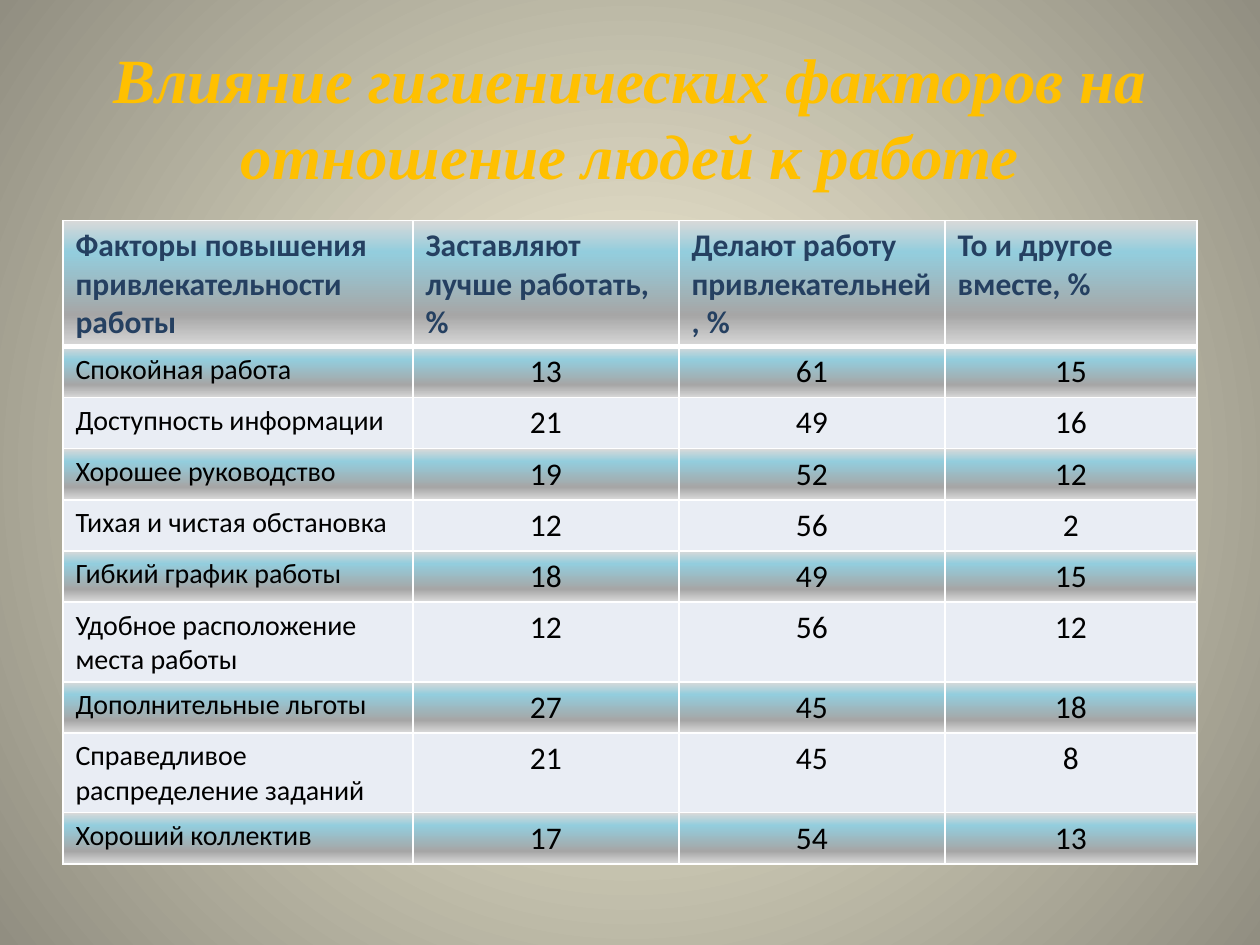
from pptx import Presentation
from pptx.dml.color import RGBColor
from pptx.enum.text import MSO_ANCHOR, PP_ALIGN
from pptx.oxml import parse_xml
from pptx.oxml.ns import nsdecls, qn
from pptx.util import Pt

HEADER = ["Факторы повышения привлекательности работы", "Заставляют лучше работать, %",
          "Делают работу привлекательней, %", "То и другое вместе, %"]
FACTORS = [
    ("Спокойная работа", 13, 61, 15),
    ("Доступность информации", 21, 49, 16),
    ("Хорошее руководство", 19, 52, 12),
    ("Тихая и чистая обстановка", 12, 56, 2),
    ("Гибкий график работы", 18, 49, 15),
    ("Удобное расположение места работы", 12, 56, 12),
    ("Дополнительные льготы", 27, 45, 18),
    ("Справедливое распределение заданий", 21, 45, 8),
    ("Хороший коллектив", 17, 54, 13),
]
COLUMN_WIDTHS = [200, 152, 152, 144]
ROW_HEIGHT = 29.2
BACKDROP = [(0, "FCF7DD"), (100, "918E81")]
METAL = [(0, "D9D9D9"), (25, "A6A6A6"), (75, "93CDDD"), (100, "D9D9D9")]
UPWARD = '<a:lin ang="16200000" scaled="0"/>'
RADIAL = '<a:path path="circle"><a:fillToRect l="50000" t="50000" r="50000" b="50000"/></a:path>'


def color(value):
    """Return a colour from a hex string."""
    return RGBColor.from_string(value)


def gradient(stops, direction):
    """Return a gradient fill element for stops given in percent."""
    marks = "".join(f'<a:gs pos="{pos * 1000}"><a:srgbClr val="{value}"/></a:gs>'
                    for pos, value in stops)
    return parse_xml(f'<a:gradFill {nsdecls("a")} rotWithShape="1">'
                     f'<a:gsLst>{marks}</a:gsLst>{direction}</a:gradFill>')


def write(tf, text, size=18, font="Calibri", fill="000000", bold=False, italic=False,
          align=PP_ALIGN.LEFT):
    """Put one formatted paragraph into a text frame."""
    tf.word_wrap = True
    p = tf.paragraphs[0]
    p.alignment = align
    r = p.add_run()
    r.text = text
    r.font.name, r.font.size = font, Pt(size)
    r.font.bold, r.font.italic = bold, italic
    r.font.color.rgb = color(fill)


def add_background(s):
    """Fill the slide with a radial gradient."""
    s.background.fill.solid()
    bg = s._element.find(".//" + qn("p:bgPr"))
    bg.replace(bg[0], gradient(BACKDROP, RADIAL))


def add_title(s, text):
    """Add the centred slide title."""
    sp = s.shapes.add_textbox(Pt(36), Pt(21.6), Pt(648), Pt(90))
    sp.text_frame.vertical_anchor = MSO_ANCHOR.MIDDLE
    write(sp.text_frame, text, size=36, font="Times New Roman", fill="FFC000",
          bold=True, italic=True, align=PP_ALIGN.CENTER)


def set_borders(cell, top=1, bottom=1):
    """Draw white borders around a cell."""
    for side, width in (("L", 1), ("R", 1), ("T", top), ("B", bottom)):
        cell._tc.get_or_add_tcPr().append(parse_xml(
            f'<a:ln{side} {nsdecls("a")} w="{Pt(width)}"><a:solidFill>'
            f'<a:srgbClr val="FFFFFF"/></a:solidFill></a:ln{side}>'))


def fill_cell(cell, row, col, text):
    """Write and style one table cell by its position."""
    if row == 0:
        write(cell.text_frame, text, fill="254061", bold=True)
    elif col == 0:
        write(cell.text_frame, text, size=16)
    else:
        write(cell.text_frame, text, align=PP_ALIGN.CENTER)
    set_borders(cell, top=3 if row == 1 else 1, bottom=3 if row == 0 else 1)
    if row == 0 or row % 2:
        cell._tc.get_or_add_tcPr().append(gradient(METAL, UPWARD))
    else:
        cell.fill.solid()
        cell.fill.fore_color.rgb = color("E9EDF4")


def add_factor_table(s):
    """Add the table of factors."""
    rows = [HEADER, *FACTORS]
    table = s.shapes.add_table(len(rows), len(HEADER), Pt(36), Pt(126), Pt(sum(COLUMN_WIDTHS)),
                               Pt(ROW_HEIGHT * len(rows))).table
    for column, width in zip(table.columns, COLUMN_WIDTHS):
        column.width = Pt(width)
    for i, values in enumerate(rows):
        for j, value in enumerate(values):
            fill_cell(table.cell(i, j), i, j, str(value))


def main():
    """Build and save the slide."""
    prs = Presentation()
    prs.slide_width, prs.slide_height = Pt(720), Pt(540)
    s = prs.slides.add_slide(prs.slide_layouts[6])
    add_background(s)
    add_title(s, "Влияние гигиенических факторов на отношение людей к работе")
    add_factor_table(s)
    prs.save("out.pptx")


if __name__ == "__main__":
    main()
